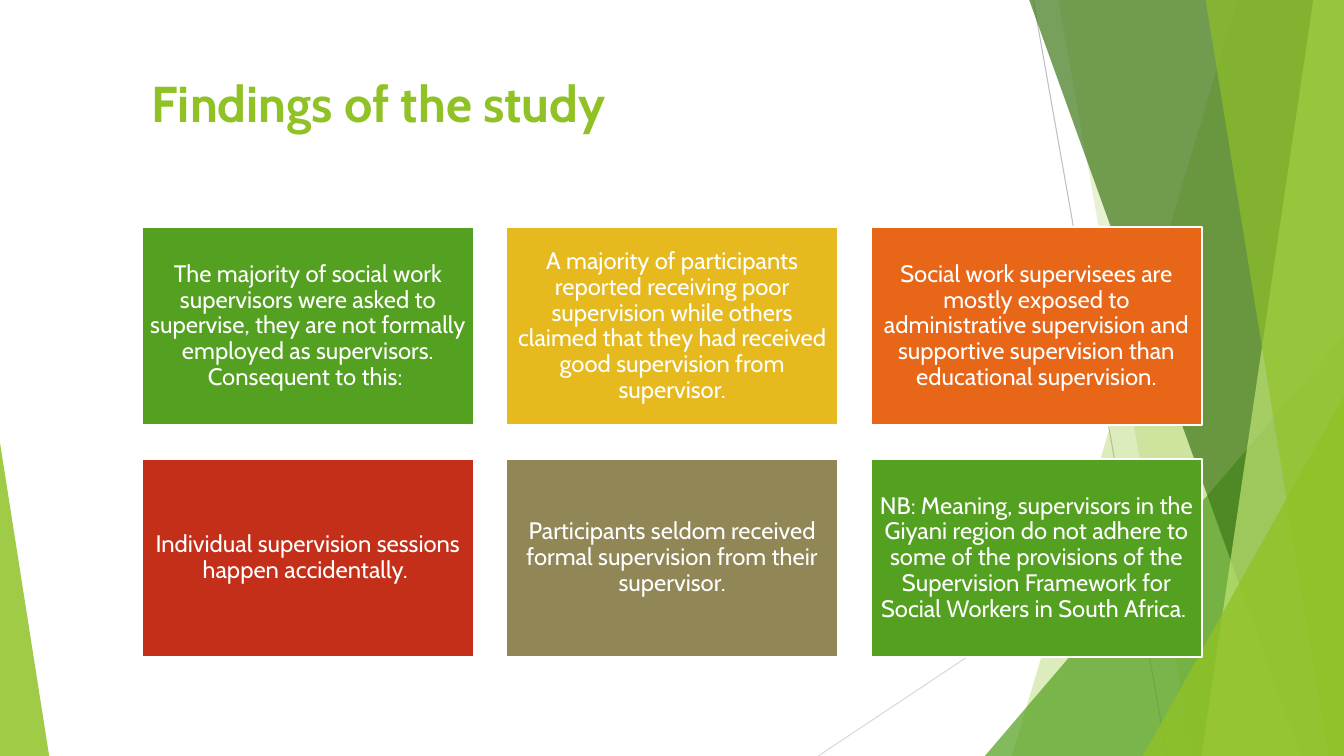
from dataclasses import dataclass

from lxml import etree
from pptx import Presentation
from pptx.dml.color import RGBColor
from pptx.enum import shapes as kinds, text as texts
from pptx.oxml import ns
from pptx.util import Cm, Pt


@dataclass(frozen=True)
class Theme:
    font: str = "Cabin"
    lime: str = "90C226"
    green: str = "54A021"
    forest: str = "3F7819"
    pale: str = "C0E474"
    gold: str = "E6B91E"
    orange: str = "E76618"
    red: str = "C42F1A"
    olive: str = "918655"
    white: str = "FFFFFF"
    gray: str = "BFBFBF"
    mist: str = "D9D9D9"
    head: int = 36
    body: int = 17


THEME = Theme()
WIDE, HIGH = 33.87, 19.05
LEFT, TOP = 3.58, 5.72
CARD_W, CARD_H = 8.36, 5
STEP_X, STEP_Y = 9.18, 5.84
COLS = 3

RAYS = [
    (26.04, 0, 29.41, HIGH, THEME.gray),
    (WIDE, 10.24, 20.62, HIGH, THEME.mist),
]
# top x, bottom x, colour, opacity
BANDS = [
    (31.19, 25.5, THEME.lime, 30),
    (26.67, 30.05, THEME.lime, 20),
    (25.93, 32.79, THEME.forest, 70),
    (33.1, 30.28, THEME.pale, 70),
    (30.38, 33.48, THEME.lime, 65),
]
# left, top, right, apex, colour, opacity
BACK_PEAK = (24.82, 8.46, WIDE, 1, THEME.green, 72)
PEAKS = [
    (28.8, 9.98, WIDE, 1, THEME.lime, 80),
    (0, 11.15, 1.24, 0, THEME.lime, 85),
]
CARDS = [
    (THEME.green, "The majority of social work supervisors were asked to supervise, "
     "they are not formally employed as supervisors. Consequent to this: "),
    (THEME.gold, "A majority of participants reported receiving poor supervision "
     "while others claimed that they had received good supervision from supervisor."),
    (THEME.orange, "Social work supervisees are mostly exposed to administrative "
     "supervision and supportive supervision than educational supervision."),
    (THEME.red, "Individual supervision sessions happen accidentally. "),
    (THEME.olive, "Participants seldom received formal supervision from their supervisor."),
    (THEME.green, "NB: Meaning, supervisors in the Giyani region do not adhere to some of "
     "the provisions of the Supervision Framework for Social Workers in South Africa. "),
]


def rgb(color):
    return RGBColor.from_string(color)


def paint(shape, color, alpha=100):
    """Give a shape a flat fill of the given opacity, with no shadow."""
    shape.shadow.inherit = False
    shape.fill.solid()
    shape.fill.fore_color.rgb = rgb(color)
    if alpha < 100:
        tint = shape.fill._xPr.find(ns.qn("a:solidFill"))[0]
        etree.SubElement(tint, ns.qn("a:alpha"), val=str(alpha * 1000))


def add_ray(slide, x1, y1, x2, y2, color):
    ray = slide.shapes.add_connector(
        kinds.MSO_CONNECTOR.STRAIGHT, Cm(x1), Cm(y1), Cm(x2), Cm(y2))
    ray.line.color.rgb = rgb(color)
    ray.line.width = Pt(0.75)
    etree.SubElement(ray._element.spPr, ns.qn("a:effectLst"))


def add_band(slide, top_x, low_x, color, alpha):
    """Draw a full-height band from a slanted left side to the slide's right edge."""
    pen = slide.shapes.build_freeform(Cm(top_x), Cm(-0.02))
    pen.add_line_segments(
        [(Cm(WIDE), Cm(-0.02)), (Cm(WIDE), Cm(HIGH)), (Cm(low_x), Cm(HIGH))])
    band = pen.convert_to_shape()
    paint(band, color, alpha)
    band.line.fill.background()


def add_peak(slide, left, top, right, apex, color, alpha):
    """Draw a triangle that stands on the slide's lower edge."""
    peak = slide.shapes.add_shape(
        kinds.MSO_SHAPE.ISOSCELES_TRIANGLE,
        Cm(left), Cm(top), Cm(right - left), Cm(HIGH - top))
    peak.adjustments[0] = apex
    paint(peak, color, alpha)
    peak.line.fill.background()


def add_run(para, words, size, color, bold=False):
    run = para.add_run()
    run.text = words
    run.font.name = THEME.font
    run.font.size = Pt(size)
    run.font.bold = bold
    run.font.color.rgb = rgb(color)


def add_title(slide, words):
    box = slide.shapes.add_textbox(Cm(LEFT), Cm(1.7), Cm(28.32), Cm(3.05))
    frame = box.text_frame
    frame.word_wrap = True
    add_run(frame.paragraphs[0], words, THEME.head, THEME.lime, bold=True)


def add_card(slide, left, top, color, words):
    card = slide.shapes.add_shape(
        kinds.MSO_SHAPE.RECTANGLE, Cm(left), Cm(top), Cm(CARD_W), Cm(CARD_H))
    paint(card, color)
    card.line.color.rgb = rgb(THEME.white)
    card.line.width = Pt(1.5)
    frame = card.text_frame
    frame.word_wrap = True
    frame.vertical_anchor = texts.MSO_ANCHOR.MIDDLE
    frame.margin_left = frame.margin_right = Cm(0.18)
    frame.margin_top = frame.margin_bottom = Cm(0.18)
    para = frame.paragraphs[0]
    para.alignment = texts.PP_ALIGN.CENTER
    para.line_spacing = 0.9
    add_run(para, words, THEME.body, THEME.white)


def add_decor(slide):
    for ray in RAYS:
        add_ray(slide, *ray)
    for band in BANDS[:2]:
        add_band(slide, *band)
    add_peak(slide, *BACK_PEAK)
    for band in BANDS[2:]:
        add_band(slide, *band)
    for peak in PEAKS:
        add_peak(slide, *peak)


def main():
    deck = Presentation()
    deck.slide_width, deck.slide_height = Cm(WIDE), Cm(HIGH)
    slide = deck.slides.add_slide(deck.slide_layouts[6])
    add_decor(slide)
    add_title(slide, "Findings of the study")
    for i, (color, words) in enumerate(CARDS):
        row, col = divmod(i, COLS)
        add_card(slide, LEFT + col * STEP_X, TOP + row * STEP_Y, color, words)
    deck.save("out.pptx")


if __name__ == "__main__":
    main()
